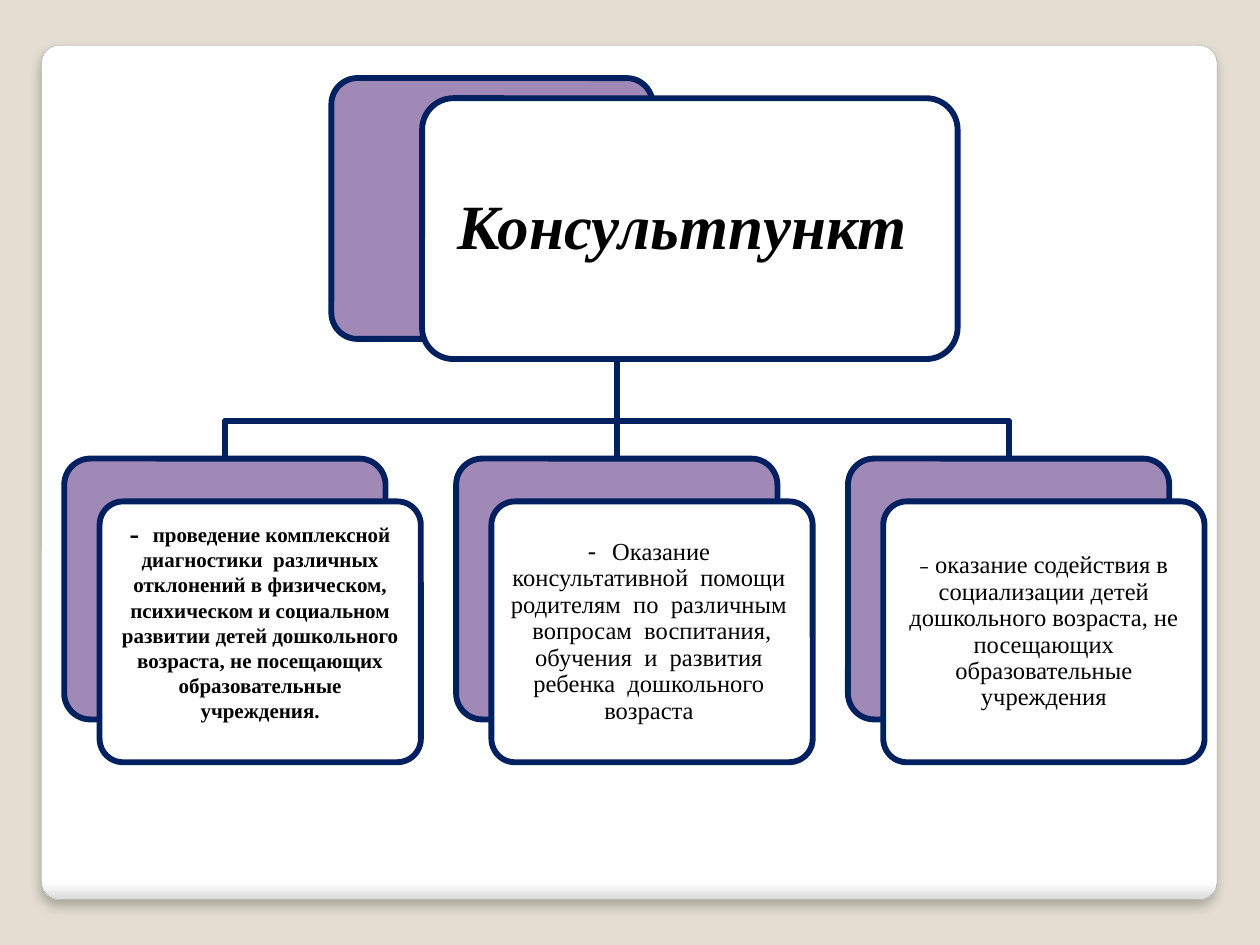
from dataclasses import dataclass

from lxml import etree
from pptx import Presentation
from pptx.dml.color import RGBColor
from pptx.enum.shapes import MSO_SHAPE as Shape
from pptx.enum.text import MSO_ANCHOR as Anchor, PP_ALIGN as Align
from pptx.oxml.ns import qn
from pptx.util import Inches, Pt


@dataclass(frozen=True)
class Theme:
    background: str = "E3DED1"
    white: str = "FFFFFF"
    panel_edge: str = "DADADA"
    panel_line: str = "A4A4A4"
    navy: str = "002060"
    purple: str = "A088B7"
    text: str = "000000"
    font: str = "Times New Roman"
    dash_font: str = "DejaVu Sans"
    line_width: float = 3.35
    title_size: int = 36
    body_size: int = 14
    bold_body_size: int = 12
    dash_size: int = 11


THEME = Theme()
BOX_WIDTH, BOX_HEIGHT = 2.55, 2.07
CHILD_LEFT, CHILD_TOP, CHILD_STEP = 0.51, 3.64, 3.11
CARD_SHIFT_X, CARD_SHIFT_Y = 0.28, 0.34
ROOT_LEFT, ROOT_TOP = 2.63, 0.62
ROOT_BOTTOM, BUS_TOP = 2.69, 3.34

# Each branch: dash, dash size, text, text size, bold, line spacing, bottom inset
BRANCHES = [
    ("–  ", THEME.dash_size,
     "проведение комплексной диагностики  различных отклонений в физическом, "
     "психическом и социальном развитии детей дошкольного возраста, "
     "не посещающих образовательные учреждения.",
     THEME.bold_body_size, True, 1.0, 0.24),
    ("-  ", THEME.body_size,
     "Оказание  консультативной  помощи  родителям  по  различным  вопросам  "
     "воспитания, обучения  и  развития  ребенка  дошкольного  возраста ",
     THEME.body_size, False, 0.9, 0.09),
    ("– ", THEME.dash_size,
     "оказание содействия в социализации детей дошкольного возраста, "
     "не посещающих образовательные учреждения",
     THEME.body_size, False, 0.9, 0.09),
]


def color(value):
    return RGBColor.from_string(value)


def add_box(slide, left, top, width, height, fill, line=THEME.navy,
            line_width=THEME.line_width, corner=0.1):
    shape = slide.shapes.add_shape(
        Shape.ROUNDED_RECTANGLE, Inches(left), Inches(top), Inches(width), Inches(height))
    shape.adjustments[0] = corner
    shape.shadow.inherit = False
    shape.fill.solid()
    shape.fill.fore_color.rgb = color(fill)
    shape.line.color.rgb = color(line)
    shape.line.width = Pt(line_width)
    return shape


def add_panel(slide):
    panel = add_box(slide, 0.33, 0.36, 9.33, 6.78, THEME.white,
                    THEME.panel_line, 0.16, 0.021)
    panel.fill.gradient()
    panel.fill.gradient_angle = 270
    stops = ((0.98, THEME.white), (1.0, THEME.panel_edge))
    for stop, (position, value) in zip(panel.fill.gradient_stops, stops):
        stop.position = position
        stop.color.rgb = color(value)
    # Soft shadow below the panel
    effects = panel.element.spPr.find(qn("a:effectLst"))
    shadow = etree.SubElement(effects, qn("a:outerShdw"), blurRad=str(Pt(6)),
                              dist=str(Pt(4)), dir="5400000", rotWithShape="0")
    tint = etree.SubElement(shadow, qn("a:srgbClr"), val="000000")
    etree.SubElement(tint, qn("a:alpha"), val="25000")


def add_branch_line(slide, start_x, end_x):
    points = [(start_x, BUS_TOP), (end_x, BUS_TOP), (end_x, CHILD_TOP)]
    if start_x == end_x:
        points = [(end_x, CHILD_TOP)]
    builder = slide.shapes.build_freeform(Inches(start_x), Inches(ROOT_BOTTOM))
    builder.add_line_segments([(Inches(x), Inches(y)) for x, y in points], close=False)
    line = builder.convert_to_shape()
    line.shadow.inherit = False
    line.fill.background()
    line.line.color.rgb = color(THEME.navy)
    line.line.width = Pt(THEME.line_width)


def set_text(shape, runs, bold, italic=False, spacing=0.9, inset=0.09, bottom=0.09):
    frame = shape.text_frame
    frame.word_wrap = True
    frame.vertical_anchor = Anchor.MIDDLE
    frame.margin_left = frame.margin_right = frame.margin_top = Inches(inset)
    frame.margin_bottom = Inches(bottom)
    paragraph = frame.paragraphs[0]
    paragraph.alignment = Align.CENTER
    paragraph.line_spacing = spacing
    paragraph.font.bold = bold
    paragraph.font.italic = italic
    paragraph.font.color.rgb = color(THEME.text)
    for text, font, size in runs:
        run = paragraph.add_run()
        run.text = text
        run.font.name = font
        run.font.size = Pt(size)


def add_root(slide):
    add_box(slide, ROOT_LEFT, ROOT_TOP, BOX_WIDTH, BOX_HEIGHT, THEME.purple)
    card = add_box(slide, 3.35, 0.78, 4.25, BOX_HEIGHT, THEME.white, corner=0.12)
    set_text(card, [("Консультпункт ", THEME.font, THEME.title_size)],
             bold=True, italic=True, inset=0.15, bottom=0.15)


def add_branch(slide, left, branch):
    dash, dash_size, text, size, bold, spacing, bottom = branch
    add_box(slide, left, CHILD_TOP, BOX_WIDTH, BOX_HEIGHT, THEME.purple)
    card = add_box(slide, left + CARD_SHIFT_X, CHILD_TOP + CARD_SHIFT_Y,
                   BOX_WIDTH, BOX_HEIGHT, THEME.white, corner=0.09)
    set_text(card, [(dash, THEME.dash_font, dash_size), (text, THEME.font, size)],
             bold, spacing=spacing, bottom=bottom)


def main():
    presentation = Presentation()
    presentation.slide_width, presentation.slide_height = Inches(10), Inches(7.5)
    slide = presentation.slides.add_slide(presentation.slide_layouts[6])
    slide.background.fill.solid()
    slide.background.fill.fore_color.rgb = color(THEME.background)
    add_panel(slide)

    # Lines run from the root to the middle of each branch
    lefts = [CHILD_LEFT + index * CHILD_STEP for index in range(len(BRANCHES))]
    centers = [left + BOX_WIDTH / 2 for left in lefts]
    for center in centers:
        add_branch_line(slide, centers[1], center)

    # Cards
    add_root(slide)
    for left, branch in zip(lefts, BRANCHES):
        add_branch(slide, left, branch)
    presentation.save("out.pptx")


if __name__ == "__main__":
    main()
